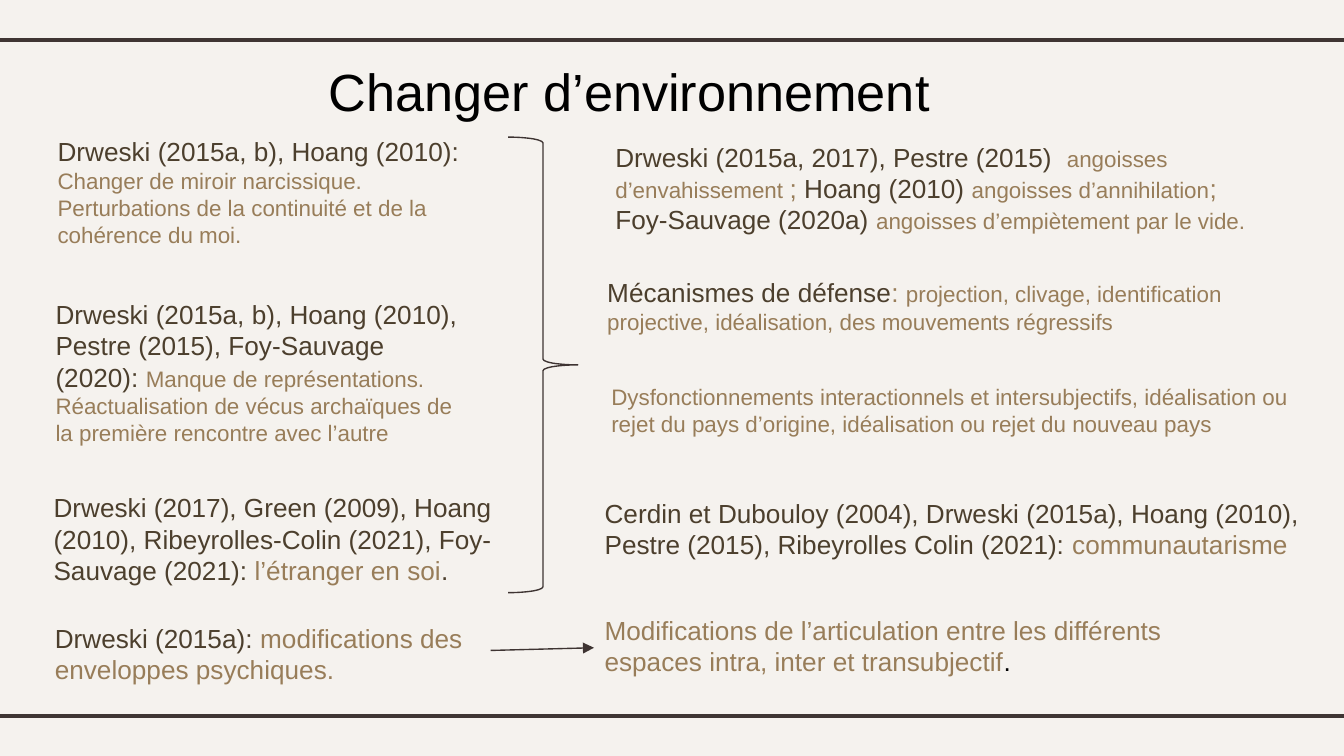
from pptx import Presentation
from pptx.dml.color import RGBColor
from pptx.enum.shapes import MSO_CONNECTOR, MSO_SHAPE
from pptx.enum.text import MSO_ANCHOR, MSO_AUTO_SIZE, PP_ALIGN
from pptx.oxml.ns import qn
from pptx.util import Inches, Pt
from lxml import etree

STRAIGHT = MSO_CONNECTOR.STRAIGHT
BRACE = MSO_SHAPE.RIGHT_BRACE
TOP = MSO_ANCHOR.TOP
CENTER = PP_ALIGN.CENTER
FIXED = MSO_AUTO_SIZE.NONE

# A 16:9 slide; the grid has 100 columns, its rows as tall as its columns are wide.
WIDTH = Inches(10)
HEIGHT = WIDTH * 9 // 16
CELL = WIDTH / 100
FONT = "Arial"
PAPER, RULE, INK, BROWN, TAN, BLACK = (
    "F5F2EE", "3F3533", "3E3432", "4C3F2D", "987D59", "000000")
BREAK = "\n"

# A note is (column, row, columns, rows, vertical inset in rows, paragraphs),
# measured from its region; a run is (text, size, colour).
CAUSES = [
    (0.3, 0, 33.4, 10.6, 1, [[
        ("Drweski (2015a, b), Hoang (2010): ", 14, BROWN),
        ("Changer de miroir narcissique.", 12, TAN), BREAK,
        ("Perturbations de la continuité et de la cohérence du moi.", 12, TAN)]]),
    (0.15, 12.1, 33, 11.8, 1, [[
        ("Drweski (2015a, b), Hoang (2010), Pestre (2015), Foy-Sauvage (2020): ", 14, BROWN),
        ("Manque de représentations. Réactualisation de vécus archaïques de "
         "la première rencontre avec l’autre", 12, TAN)]]),
    (0, 27, 36.5, 8.1, 0.5, [[
        ("Drweski (2017), Green (2009), Hoang (2010), Ribeyrolles-Colin (2021), "
         "Foy-Sauvage (2021): ", 14, BROWN),
        ("l’étranger en soi", 14, TAN), (".", 14, BROWN)]]),
    (0.1, 36.7, 34.7, 5.7, 0.5, [[
        ("Drweski (2015a): ", 14, BROWN),
        ("modifications des enveloppes psychiques.", 14, TAN)]]),
]
EFFECTS = [
    (0.8, 0.9, 55.1, 8.1, 0.5, [
        [("Drweski (2015a, 2017), Pestre (2015)  ", 14, BROWN),
         ("angoisses d’envahissement ", 12, TAN), ("; ", 14, TAN),
         ("Hoang (2010) ", 14, BROWN),
         ("angoisses d’annihilation", 12, TAN), (";", 14, TAN)],
        [("Foy-Sauvage (2020a) ", 14, BROWN),
         ("angoisses d’empiètement par le vide.", 12, TAN)]]),
    (0.2, 11, 53.7, 5.4, 0.5, [[
        ("Mécanismes de défense", 14, BROWN), (": ", 14, TAN),
        ("projection, clivage, identification projective, idéalisation, "
         "des mouvements régressifs", 12, TAN)]]),
    (0.5, 18.4, 52.5, 6.9, 1, [[
        ("Dysfonctionnements interactionnels et intersubjectifs, idéalisation ou rejet "
         "du pays d’origine, idéalisation ou rejet du nouveau pays", 12, TAN)]]),
    (0, 27.4, 56.8, 5.7, 0.5, [[
        ("Cerdin et Dubouloy (2004), Drweski (2015a), Hoang (2010),  Pestre (2015), "
         "Ribeyrolles Colin (2021): ", 14, BROWN),
        ("communautarisme", 14, TAN)]]),
    (0, 36.1, 51, 5.7, 0.5, [[
        ("Modifications de l’articulation entre les différents espaces intra, "
         "inter et transubjectif", 14, TAN), (".", 14, BLACK)]]),
]


def cells(*counts):
    return [round(count * CELL) for count in counts]


def color(hex_text):
    return RGBColor.from_string(hex_text)


def fill_frame(frame, paragraphs, inset):
    """Format a text frame and write its paragraphs run by run."""
    frame.word_wrap = True
    frame.auto_size = FIXED
    frame.vertical_anchor = TOP
    frame.margin_left, frame.margin_right = cells(1, 1)
    frame.margin_top, frame.margin_bottom = cells(inset, inset)
    for index, runs in enumerate(paragraphs):
        paragraph = frame.add_paragraph() if index else frame.paragraphs[0]
        for part in runs:
            if part == BREAK:
                paragraph.add_line_break()
                etree.SubElement(paragraph._p[-1], qn("a:rPr"), sz="1200")
                continue
            run = paragraph.add_run()
            run.text, size, tint = part
            run.font.name, run.font.size = FONT, Pt(size)
            run.font.color.rgb = color(tint)


def add_line(slide, start, end, tint, weight, arrow=False):
    line = slide.shapes.add_connector(STRAIGHT, *cells(*start, *end))
    line.line.color.rgb = color(tint)
    line.line.width = Pt(weight)
    if arrow:
        etree.SubElement(line.line._get_or_add_ln(), qn("a:tailEnd"), type="triangle")
    etree.SubElement(line._element.spPr, qn("a:effectLst"))


def add_title(slide, box):
    title = slide.shapes.title
    title.left, title.top, title.width, title.height = cells(*box)
    fill_frame(title.text_frame, [[("Changer d’environnement", 28, BLACK)]], 1)
    title.text_frame.paragraphs[0].alignment = CENTER


def add_notes(slide, left, top, notes):
    for column, row, columns, rows, inset, paragraphs in notes:
        note = slide.shapes.add_textbox(*cells(left + column, top + row, columns, rows))
        fill_frame(note.text_frame, paragraphs, inset)


def add_brace(slide, box):
    brace = slide.shapes.add_shape(BRACE, *cells(*box))
    brace.shadow.inherit = False
    brace.fill.background()
    brace.line.color.rgb = color(INK)
    brace.line.width = Pt(0.75)


def main():
    deck = Presentation()
    deck.slide_width, deck.slide_height = WIDTH, HEIGHT
    slide = deck.slides.add_slide(deck.slide_layouts.get_by_name("Title Only"))
    slide.background.fill.solid()
    slide.background.fill.fore_color.rgb = color(PAPER)
    for row in (3, 53.3):
        add_line(slide, (-0.8, row), (100.8, row), RULE, 2.25)
    add_title(slide, (-1.1, 3.4, 95.8, 6.3))
    add_notes(slide, 3, 9.1, CAUSES)
    add_notes(slide, 44, 9.1, EFFECTS)
    add_brace(slide, (37.8, 10.2, 5.2, 33.9))
    add_line(slide, (36.5, 48.4), (44.2, 48.2), INK, 0.75, arrow=True)
    deck.save("out.pptx")


if __name__ == "__main__":
    main()
